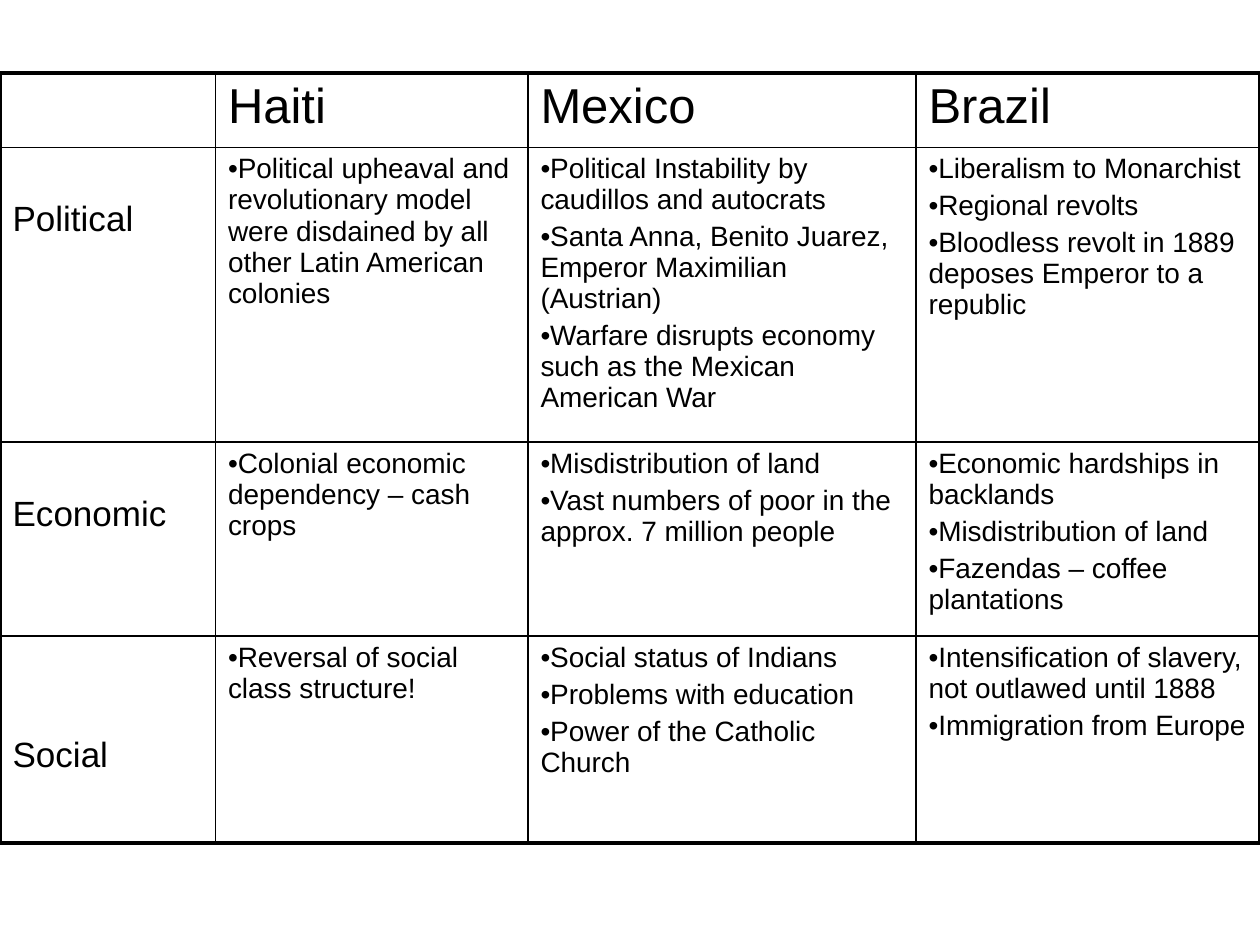
from lxml import etree
from pptx import Presentation
from pptx.dml.color import RGBColor
from pptx.oxml.ns import qn
from pptx.util import Inches, Pt

COLORS = {"ink": "000000"}
COLS = [1.71, 2.48, 3.08, 2.73]
ROWS = [0.59, 2.34, 1.54, 1.64]
THIN, THICK = 1, 2.25
LABEL_LINE = 0.37
FONT = "Arial"
HEAD = {"size": Pt(28), "name": FONT}
LABEL = {"size": Pt(20), "name": FONT}
BODY = {"size": Pt(16), "name": FONT}

COUNTRIES = ["Haiti", "Mexico", "Brazil"]
TOPICS = [
    ("Political", 1, [
        ["Political upheaval and revolutionary model were disdained by all "
         "other Latin American colonies"],
        ["Political Instability by caudillos and autocrats",
         "Santa Anna, Benito Juarez, Emperor Maximilian (Austrian)",
         "Warfare disrupts economy such as the Mexican American War"],
        ["Liberalism to Monarchist",
         "Regional revolts",
         "Bloodless revolt in 1889 deposes Emperor to a republic"]]),
    ("Economic", 1, [
        ["Colonial economic dependency – cash crops"],
        ["Misdistribution of land",
         "Vast numbers of poor in the approx. 7 million people"],
        ["Economic hardships in backlands",
         "Misdistribution of land",
         "Fazendas – coffee plantations"]]),
    ("Social", 2, [
        ["Reversal of social class structure!"],
        ["Social status of Indians",
         "Problems with education",
         "Power of the Catholic Church"],
        ["Intensification of slavery, not outlawed until 1888",
         "Immigration from Europe"]]),
]


def set_borders(cell, row, col):
    """Draw thick lines on the table's rim and thin lines inside."""
    rim = {"lnL": col == 0, "lnR": col == len(COLS) - 1,
           "lnT": row == 0, "lnB": row == len(ROWS) - 1}
    tcPr = cell._tc.get_or_add_tcPr()
    for tag, outer in rim.items():
        ln = etree.SubElement(tcPr, qn(f"a:{tag}"),
                              w=str(Pt(THICK if outer else THIN)))
        fill = etree.SubElement(ln, qn("a:solidFill"))
        etree.SubElement(fill, qn("a:srgbClr"), val=COLORS["ink"])


def write_cell(cell, lines, style, bullet=False, skip=0):
    """Write one paragraph per line, lowered by a number of label lines."""
    cell.margin_top = Inches(0.05 + skip * LABEL_LINE)
    tf = cell.text_frame
    for i, line in enumerate(lines):
        p = tf.add_paragraph() if i else tf.paragraphs[0]
        p.space_before = Pt(3.2 if i else 0)
        if bullet:
            pPr = p._p.get_or_add_pPr()
            pPr.set("marL", "0")
            pPr.set("indent", "0")
            etree.SubElement(pPr, qn("a:buFont"), typeface=FONT)
            etree.SubElement(pPr, qn("a:buChar"), char="•")
        r = p.add_run()
        r.text = line
        for key, value in style.items():
            setattr(r.font, key, value)
        r.font.color.rgb = RGBColor.from_string(COLORS["ink"])


def add_comparison(slide, left, top):
    """Add the table of topics by country at the given corner."""
    table = slide.shapes.add_table(
        len(ROWS), len(COLS), Inches(left), Inches(top),
        Inches(sum(COLS)), Inches(sum(ROWS))).table
    table.first_row = table.horz_banding = False
    for column, width in zip(table.columns, COLS):
        column.width = Inches(width)
    for table_row, height in zip(table.rows, ROWS):
        table_row.height = Inches(height)
    for row in range(len(ROWS)):
        for col in range(len(COLS)):
            cell = table.cell(row, col)
            set_borders(cell, row, col)
            cell.fill.background()
    for col, country in enumerate(COUNTRIES, 1):
        write_cell(table.cell(0, col), [country], HEAD)
    for row, (topic, skip, columns) in enumerate(TOPICS, 1):
        write_cell(table.cell(row, 0), [topic], LABEL, skip=skip)
        for col, points in enumerate(columns, 1):
            write_cell(table.cell(row, col), points, BODY, bullet=True)


def main():
    """Build the slide and save it."""
    prs = Presentation()
    prs.slide_width, prs.slide_height = Inches(10), Inches(7.5)
    slide = prs.slides.add_slide(prs.slide_layouts[6])
    add_comparison(slide, 0, 0.58)
    prs.save("out.pptx")


if __name__ == "__main__":
    main()
